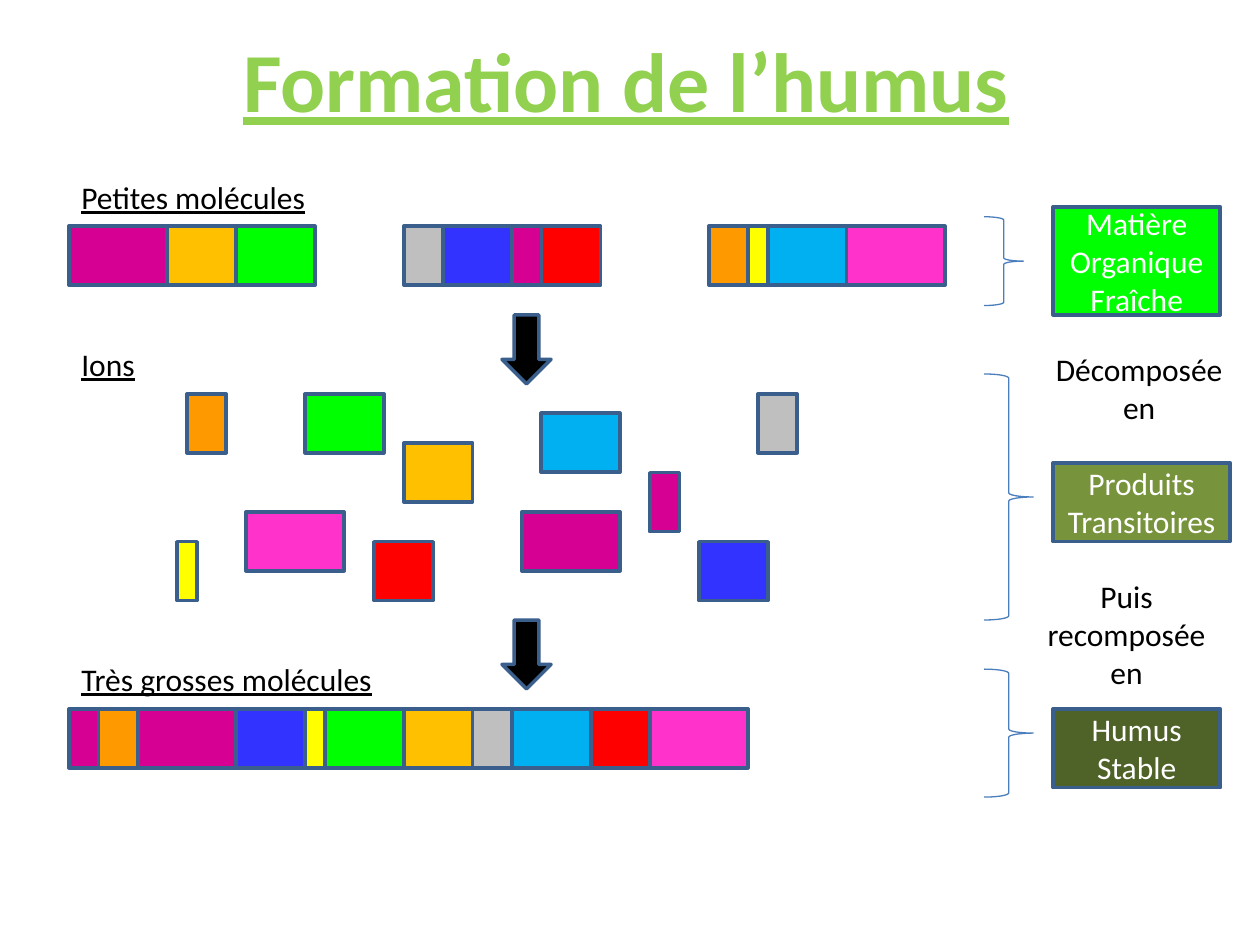
from pptx import Presentation
from pptx.dml.color import RGBColor
from pptx.enum.shapes import MSO_SHAPE
from pptx.enum.text import MSO_ANCHOR, PP_ALIGN
from pptx.util import Cm, Pt

BLACK = RGBColor(0x00, 0x00, 0x00)
WHITE = RGBColor(0xFF, 0xFF, 0xFF)
TITLE_GREEN = RGBColor(0x92, 0xD0, 0x50)
OUTLINE = RGBColor(0x3A, 0x5F, 0x8C)
BRACE_BLUE = RGBColor(0x4B, 0x7E, 0xBC)
MAGENTA = RGBColor(0xD6, 0x00, 0x93)
GOLD = RGBColor(0xFF, 0xC0, 0x00)
GREEN = RGBColor(0x00, 0xFF, 0x00)
GREY = RGBColor(0xBF, 0xBF, 0xBF)
BLUE = RGBColor(0x33, 0x33, 0xFF)
RED = RGBColor(0xFF, 0x00, 0x00)
ORANGE = RGBColor(0xFF, 0x99, 0x00)
YELLOW = RGBColor(0xFF, 0xFF, 0x00)
CYAN = RGBColor(0x00, 0xB0, 0xF0)
PINK = RGBColor(0xFF, 0x33, 0xCC)
OLIVE = RGBColor(0x77, 0x93, 0x3C)
DARK_OLIVE = RGBColor(0x4F, 0x62, 0x28)

# All lengths are in centimetres.
ION_HEIGHT = 1.19
IONS = {  # name: (colour, width)
    "magenta": (MAGENTA, 1.98),
    "small magenta": (MAGENTA, 0.6),
    "gold": (GOLD, 1.39),
    "green": (GREEN, 1.59),
    "grey": (GREY, 0.79),
    "blue": (BLUE, 1.39),
    "red": (RED, 1.19 + 0.3),
    "orange": (ORANGE, 0.79),
    "yellow": (YELLOW, 0.4),
    "cyan": (CYAN, 1.59),
    "pink": (PINK, 1.98),
}
IONS["red"] = (RED, 1.19)

MOLECULES = [  # left, top, ions joined from left to right
    (1.39, 4.56, ["magenta", "gold", "green"]),
    (8.14, 4.56, ["grey", "blue", "small magenta", "red"]),
    (14.29, 4.56, ["orange", "yellow", "cyan", "pink"]),
    (1.39, 14.29, ["small magenta", "orange", "magenta", "blue", "yellow", "green",
                   "gold", "grey", "cyan", "red", "pink"]),
]
FREE_IONS = [  # name, left, top
    ("orange", 3.77, 7.94), ("green", 6.15, 7.94), ("grey", 15.28, 7.94),
    ("cyan", 10.91, 8.33), ("gold", 8.14, 8.93), ("small magenta", 13.1, 9.53),
    ("pink", 4.96, 10.32), ("magenta", 10.52, 10.32),
    ("yellow", 3.57, 10.92), ("red", 7.54, 10.92), ("blue", 14.09, 10.92),
]
BRACES = [(4.37, 0.79, 1.79), (7.54, 0.99, 4.96), (13.49, 0.99, 2.58)]  # top, width, height
ARROW_TOPS = [6.35, 12.5]
STAGES = [  # text, colour, top, width, height
    ("Matière Organique Fraîche", GREEN, 4.17, 3.37, 2.18),
    ("Produits Transitoires", OLIVE, 9.33, 3.57, 1.59),
    ("Humus Stable", DARK_OLIVE, 14.29, 3.37, 1.59),
]
HEADINGS = [("Petites molécules", 3.57), ("Ions", 6.94), ("Très grosses molécules", 13.29)]
TRANSITIONS = [  # text, top, width, height
    ("Décomposée en", 6.94, 4.27, 1.8),
    ("Puis recomposée en", 11.51, 3.76, 2.57),
]


def write(shape, text, color, size=18, align=PP_ALIGN.CENTER, anchor=MSO_ANCHOR.MIDDLE,
          bold=False, underline=False):
    frame = shape.text_frame
    frame.word_wrap = True
    frame.vertical_anchor = anchor
    frame.text = text
    paragraph = frame.paragraphs[0]
    paragraph.alignment = align
    font = paragraph.runs[0].font
    font.name, font.size, font.bold, font.underline = "Calibri", Pt(size), bold, underline
    font.color.rgb = color


def add_text(slide, box, text, color=BLACK, **style):
    write(slide.shapes.add_textbox(*map(Cm, box)), text, color, **style)


def add_outlined(slide, kind, box, fill, line=OUTLINE, line_width=2):
    shape = slide.shapes.add_shape(kind, *map(Cm, box))
    shape.shadow.inherit = False
    if fill is None:
        shape.fill.background()
    else:
        shape.fill.solid()
        shape.fill.fore_color.rgb = fill
    shape.line.color.rgb = line
    shape.line.width = Pt(line_width)
    return shape


def add_ion(slide, name, left, top):
    """Draw one ion and return its right edge."""
    color, width = IONS[name]
    add_outlined(slide, MSO_SHAPE.RECTANGLE, (left, top, width, ION_HEIGHT), color)
    return left + width


def main():
    presentation = Presentation()
    presentation.slide_width, presentation.slide_height = Cm(25.4), Cm(19.05)
    slide = presentation.slides.add_slide(presentation.slide_layouts[6])

    add_text(slide, (1.19, 0, 22.86, 3.18), "Formation de l’humus", TITLE_GREEN,
             size=48, bold=True, underline=True)

    for left, top, names in MOLECULES:
        for name in names:
            left = add_ion(slide, name, left, top)
    for name, left, top in FREE_IONS:
        add_ion(slide, name, left, top)

    for top, width, height in BRACES:
        add_outlined(slide, MSO_SHAPE.RIGHT_BRACE, (19.84, top, width, height), None,
                     BRACE_BLUE, 0.75)
    for text, color, top, width, height in STAGES:
        stage = add_outlined(slide, MSO_SHAPE.RECTANGLE, (21.23, top, width, height), color)
        write(stage, text, WHITE)
    for top in ARROW_TOPS:
        add_outlined(slide, MSO_SHAPE.DOWN_ARROW, (10.12, top, 0.99, 1.39), BLACK)

    for text, top in HEADINGS:
        add_text(slide, (1.39, top, 7.54, 0.79), text, align=PP_ALIGN.LEFT, underline=True)
    for text, top, width, height in TRANSITIONS:
        add_text(slide, (20.83, top, width, height), text, anchor=MSO_ANCHOR.TOP)

    presentation.save("out.pptx")


if __name__ == "__main__":
    main()
